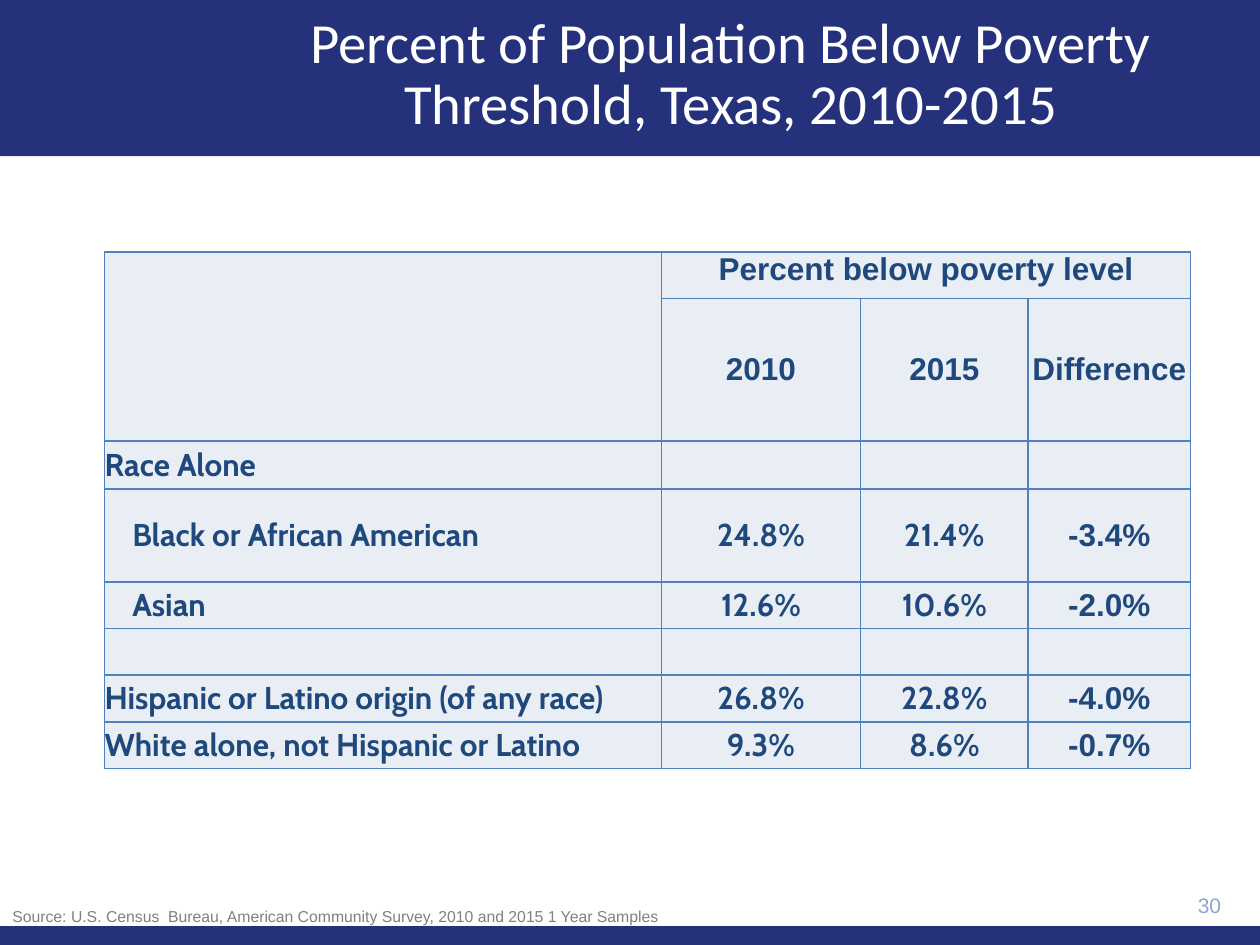
from lxml.etree import SubElement
from pptx import Presentation
from pptx.dml.color import RGBColor
from pptx.enum.shapes import MSO_SHAPE
from pptx.enum.text import MSO_ANCHOR as Anchor, MSO_AUTO_SIZE as AutoSize, PP_ALIGN as Align
from pptx.oxml.ns import qn
from pptx.util import Inches, Pt

COLOURS = {
    "band": "25327B",
    "title": "FFFFFF",
    "cell": "E9EDF4",
    "border": "4F81BD",
    "table_text": "1F497D",
    "number": "8FA5D1",
    "source": "808080",
}
COLUMN_WIDTHS = [4.42, 1.58, 1.33, 1.29]
ROW_HEIGHTS = [0.37, 1.13, 0.38, 0.74, 0.37, 0.37, 0.37, 0.37]
INDENTED = {"Black or African American", "Asian"}
ROWS = [
    ["", "Percent below poverty level", "", ""],
    ["", "2010", "2015", "Difference"],
    ["Race Alone", "", "", ""],
    ["Black or African American", "24.8%", "21.4%", "-3.4%"],
    ["Asian", "12.6%", "10.6%", "-2.0%"],
    ["", "", "", ""],
    ["Hispanic or Latino origin (of any race)", "26.8%", "22.8%", "-4.0%"],
    ["White alone, not Hispanic or Latino", "9.3%", "8.6%", "-0.7%"],
]


def colour(name):
    return RGBColor.from_string(COLOURS[name])


def write(frame, text, size, font, colour_name, align=Align.LEFT, bold=False, spacing=None):
    frame.text = text
    para = frame.paragraphs[0]
    para.alignment = align
    para.line_spacing = spacing
    for span in para.runs:
        span.font.size = Pt(size)
        span.font.name = font
        span.font.bold = bold
        span.font.color.rgb = colour(colour_name)


def set_title(page, text):
    title = page.shapes.title
    title.left, title.top = Inches(1.7), Inches(0.1)
    title.width, title.height = Inches(8.2), Inches(1)
    frame = title.text_frame
    frame.word_wrap = True
    frame.auto_size = AutoSize.NONE
    frame.vertical_anchor = Anchor.MIDDLE
    write(frame, text, 32.4, "Calibri", "title", Align.CENTER, spacing=0.9)


def add_band(page, top, height):
    """Add a full-width bar behind the title."""
    band = page.shapes.add_shape(
        MSO_SHAPE.RECTANGLE, 0, Inches(top), Inches(10), Inches(height))
    band.shadow.inherit = False
    band.fill.solid()
    band.fill.fore_color.rgb = colour("band")
    band.line.fill.background()
    page.shapes.title._element.addprevious(band._element)


def add_text(page, left, top, width, height, text, size, colour_name,
             align=Align.LEFT, anchor=Anchor.TOP, spacing=None):
    box = page.shapes.add_textbox(Inches(left), Inches(top), Inches(width), Inches(height))
    box.text_frame.word_wrap = True
    box.text_frame.vertical_anchor = anchor
    write(box.text_frame, text, size, "Arial", colour_name, align, spacing=spacing)


def set_borders(cell):
    properties = cell._tc.get_or_add_tcPr()
    for side in ("lnL", "lnR", "lnT", "lnB"):
        line = SubElement(properties, qn(f"a:{side}"), w=str(Pt(1)))
        fill = SubElement(line, qn("a:solidFill"))
        SubElement(fill, qn("a:srgbClr"), val=COLOURS["border"])


def format_cell(cell, text, row, column):
    set_borders(cell)
    cell.fill.solid()
    cell.fill.fore_color.rgb = colour("cell")
    cell.margin_left = Inches(0.22 if text in INDENTED else 0)
    cell.margin_right = cell.margin_top = cell.margin_bottom = 0
    cell.vertical_anchor = Anchor.TOP if row == 0 else Anchor.MIDDLE
    font = "Arial" if row < 2 or column == 3 else "Cabin"
    align = Align.CENTER if column else Align.LEFT
    write(cell.text_frame, text, 18, font, "table_text", align, bold=True)


def add_poverty_table(page):
    table = page.shapes.add_table(
        len(ROWS), len(COLUMN_WIDTHS), Inches(0.83), Inches(2),
        Inches(sum(COLUMN_WIDTHS)), Inches(sum(ROW_HEIGHTS))).table
    table.first_row = table.horz_banding = False
    for column, width in zip(table.columns, COLUMN_WIDTHS):
        column.width = Inches(width)
    for row, height in zip(table.rows, ROW_HEIGHTS):
        row.height = Inches(height)
    for r, texts in enumerate(ROWS):
        for c, text in enumerate(texts):
            format_cell(table.cell(r, c), text, r, c)
    table.cell(0, 0).merge(table.cell(1, 0))
    table.cell(0, 1).merge(table.cell(0, 3))


def main():
    deck = Presentation()
    deck.slide_width, deck.slide_height = Inches(10), Inches(7.5)
    page = deck.slides.add_slide(deck.slide_layouts[5])
    set_title(page, "Percent of Population Below Poverty Threshold, Texas, 2010-2015")
    add_band(page, 0, 1.24)
    add_band(page, 7.35, 0.15)
    add_poverty_table(page)
    add_text(page, 8.9, 7.01, 0.89, 0.34, "30", 12, "number", Align.RIGHT, Anchor.MIDDLE)
    add_text(page, 0, 7.14, 7, 0.26,
             "Source: U.S. Census  Bureau, American Community Survey, 2010 and 2015 1 Year Samples",
             9, "source", spacing=1.07)
    deck.save("out.pptx")


if __name__ == "__main__":
    main()
